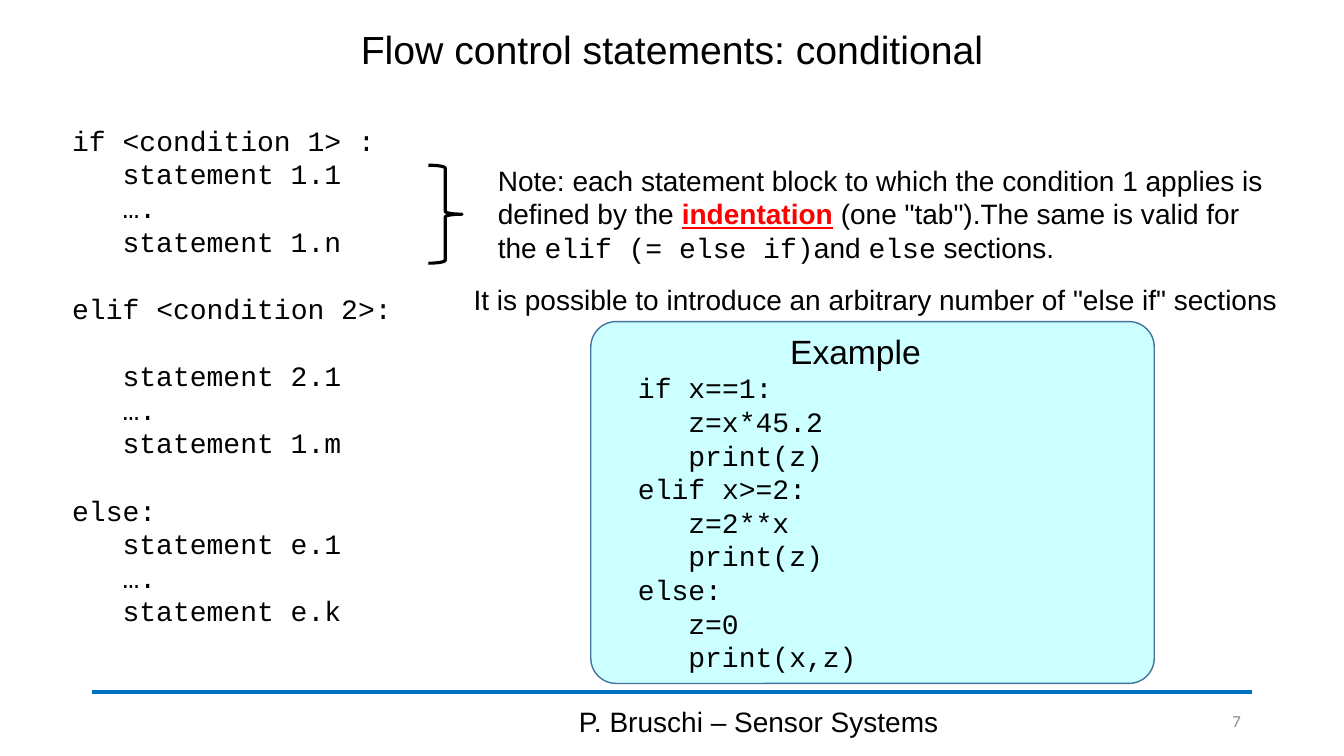
"""Build the slide on conditional flow control statements."""
from pptx import Presentation
from pptx.dml.color import RGBColor
from pptx.enum.shapes import MSO_CONNECTOR as Link, MSO_SHAPE as Form
from pptx.enum.text import MSO_ANCHOR as Anchor, PP_ALIGN as Align
from pptx.oxml.ns import qn
from pptx.util import Pt

BLACK = RGBColor(0x00, 0x00, 0x00)
RED = RGBColor(0xFF, 0x00, 0x00)
BLUE = RGBColor(0x00, 0x70, 0xC0)
GREY = RGBColor(0x8C, 0x8C, 0x8C)
CYAN = RGBColor(0xCC, 0xFF, 0xFF)
STEEL = RGBColor(0x43, 0x73, 0x9E)
SANS, MONO, SMALL = "Arial", "Courier New", "Calibri"
SIZE, GAP = 20, 24

SYNTAX = [
    ["if <condition 1> :", "\tstatement 1.1", "\t….", "\tstatement 1.n"],
    ["elif <condition 2>:"],
    ["\tstatement 2.1", "\t….", "\tstatement 1.m"],
    ["else:", "\tstatement e.1", "\t….", "\tstatement e.k"],
]
SAMPLE = [
    ["if x==1:", "\tz=x*45.2", "\tprint(z)", "elif x>=2:", "\tz=2**x",
     "\tprint(z)", "else:", "\tz=0", "\tprint(x,z)"],
]
NOTE = [
    ("Note: each statement block to which the condition 1 applies is "
     "defined by the ", SANS),
    ("indentation", SANS),
    (" (one \"tab\").The same is valid for the ", SANS),
    ("elif (= else if)", MONO),
    ("and ", SANS),
    ("else", MONO),
    (" sections.", SANS),
]


class Page:
    def __init__(self, deck):
        self.slide = deck.slides.add_slide(deck.slide_layouts[5])
        self.shapes = self.slide.shapes

    def style(self, para, face=SANS, size=SIZE, color=BLACK, align=Align.LEFT):
        para.alignment = align
        font = para.font
        font.name, font.size, font.color.rgb = face, Pt(size), color

    def title(self, text, x, y, w, h):
        head = self.shapes.title
        head.left, head.top, head.width, head.height = map(Pt, (x, y, w, h))
        head.text_frame.text = text
        head.text_frame.vertical_anchor = Anchor.MIDDLE
        para = head.text_frame.paragraphs[0]
        para.line_spacing = 0.9
        self.style(para, size=28, align=Align.CENTER)

    def frame(self, x, y, w, h, wrap=True, anchor=Anchor.TOP):
        frame = self.shapes.add_textbox(*map(Pt, (x, y, w, h))).text_frame
        frame.word_wrap = wrap
        frame.vertical_anchor = anchor
        return frame

    def label(self, text, x, y, w, h, wrap=True, anchor=Anchor.TOP, **look):
        frame = self.frame(x, y, w, h, wrap, anchor)
        frame.text = text
        self.style(frame.paragraphs[0], **look)

    def code(self, blocks, x, y, w, h):
        frame = self.frame(x, y, w, h)
        frame.text = "\n".join(line for block in blocks for line in block)
        for para in frame.paragraphs:
            self.style(para, MONO)
        start = 0
        for block in blocks[:-1]:
            start += len(block)
            frame.paragraphs[start].space_before = Pt(GAP)

    def note(self, parts, key, x, y, w, h):
        para = self.frame(x, y, w, h).paragraphs[0]
        self.style(para)
        for text, face in parts:
            run = para.add_run()
            run.text = text
            run.font.name = face
            if text == key:
                run.font.color.rgb = RED
                run.font.bold = run.font.underline = True

    def shape(self, form, x, y, w, h, line, width, fill=None, round=None):
        shape = self.shapes.add_shape(form, *map(Pt, (x, y, w, h)))
        shape.shadow.inherit = False
        shape.line.color.rgb, shape.line.width = line, Pt(width)
        if fill is None:
            shape.fill.background()
        else:
            shape.fill.solid()
            shape.fill.fore_color.rgb = fill
        if round is not None:
            shape.adjustments[0] = round

    def rule(self, x, y, end, color, width):
        line = self.shapes.add_connector(
            Link.STRAIGHT, Pt(x), Pt(y), Pt(end), Pt(y))
        line.line.color.rgb, line.line.width = color, Pt(width)
        props = line._element.spPr
        props.append(props.makeelement(qn("a:effectLst"), {}))


def main():
    deck = Presentation()
    deck.slide_width, deck.slide_height = Pt(960), Pt(540)
    page = Page(deck)
    page.rule(66, 494, 894, BLUE, 2.75)
    page.title("Flow control statements: conditional", 66, 10.8, 828, 52)
    page.label("P. Bruschi – Sensor Systems", 318, 500.5, 448, 28.8,
               anchor=Anchor.MIDDLE, align=Align.CENTER)
    page.label("7", 824.5, 500.5, 69, 28.8, anchor=Anchor.MIDDLE,
               face=SMALL, size=12, color=GREY, align=Align.RIGHT)
    page.code(SYNTAX, 44.5, 84.5, 304, 395)
    page.shape(Form.RIGHT_BRACE, 306, 118, 24, 70, BLACK, 2.25)
    page.note(NOTE, "indentation", 348.5, 113, 567, 80)
    page.label("It is possible to introduce an arbitrary number of "
               "\"else if\" sections", 331.2, 198, 601, 31.5)
    page.shape(Form.ROUNDED_RECTANGLE, 422, 229.7, 402.5, 258.5, STEEL, 1,
               CYAN, 0.07)
    page.code(SAMPLE, 448.6, 261.4, 351, 225.4)
    page.label("Example", 557.3, 232.6, 108.7, 36, wrap=False, size=24)
    deck.save("out.pptx")


if __name__ == "__main__":
    main()
